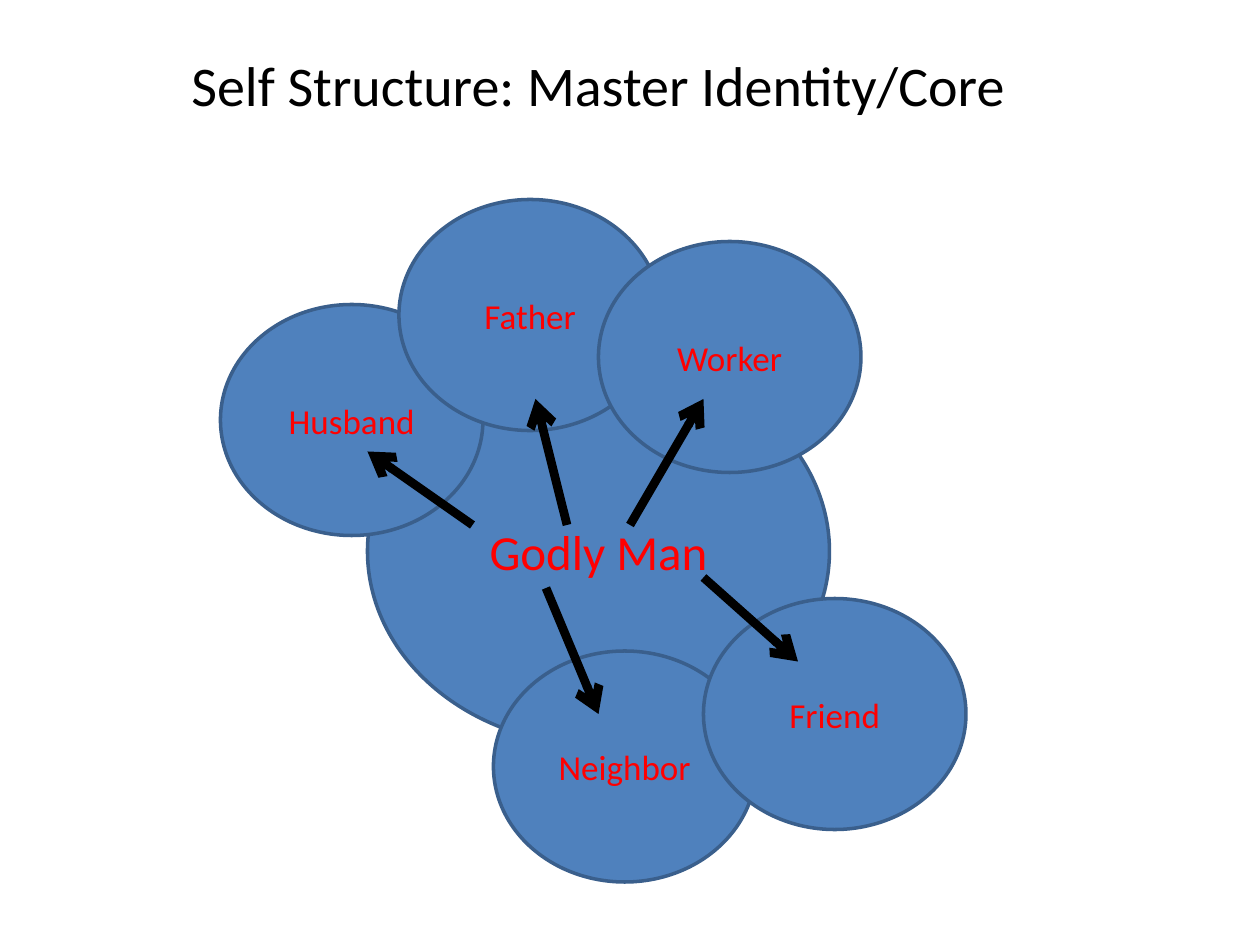
from typing import NamedTuple

from lxml import etree
from pptx import Presentation
from pptx.dml.color import RGBColor
from pptx.enum.shapes import MSO_CONNECTOR, MSO_SHAPE
from pptx.enum.text import MSO_ANCHOR, PP_ALIGN
from pptx.oxml.ns import qn
from pptx.util import Pt

PX = 7620  # EMU per px, 120 px to the inch
OVAL = MSO_SHAPE.OVAL
STRAIGHT = MSO_CONNECTOR.STRAIGHT
MIDDLE = MSO_ANCHOR.MIDDLE
CENTER = PP_ALIGN.CENTER

FONT = "Calibri"
COLORS = {
    "title": "000000",
    "circle": "4F81BD",
    "outline": "3A5F8C",
    "label": "FF0000",
    "arrow": "000000",
}
ROLE_W, ROLE_H = 250, 220


class Identity(NamedTuple):
    label: str
    x: int
    y: int
    w: int = ROLE_W
    h: int = ROLE_H
    size: int = 20


class Arrow(NamedTuple):
    x1: int
    y1: int
    x2: int
    y2: int


IDENTITIES = [
    Identity("Godly Man", 350, 340, 440, 370, 28),
    Identity("Husband", 210, 290),
    Identity("Neighbor", 470, 620),
    Identity("Father", 380, 190),
    Identity("Worker", 570, 230),
    Identity("Friend", 670, 570),
]
ARROWS = [
    Arrow(450, 500, 350, 430),
    Arrow(520, 560, 570, 680),
    Arrow(670, 550, 760, 630),
    Arrow(600, 500, 670, 380),
    Arrow(540, 500, 510, 380),
]


def rgb(name: str) -> RGBColor:
    return RGBColor.from_string(COLORS[name])


def set_text(sp, text: str, size: int, color: str) -> None:
    tf = sp.text_frame
    tf.word_wrap = True
    tf.vertical_anchor = MIDDLE
    p = tf.paragraphs[0]
    p.text = text
    p.alignment = CENTER
    p.font.name = FONT
    p.font.size = Pt(size)
    p.font.color.rgb = rgb(color)


def add_title(slide, text: str) -> None:
    sp = slide.shapes.add_textbox(40 * PX, 30 * PX, 1060 * PX, 100 * PX)
    set_text(sp, text, 32, "title")


def add_identity(slide, item: Identity) -> None:
    sp = slide.shapes.add_shape(
        OVAL, item.x * PX, item.y * PX, item.w * PX, item.h * PX)
    sp.shadow.inherit = False
    sp.fill.solid()
    sp.fill.fore_color.rgb = rgb("circle")
    sp.line.color.rgb = rgb("outline")
    sp.line.width = Pt(2)
    set_text(sp, item.label, item.size, "label")


def add_arrow(group, arrow: Arrow) -> None:
    line = group.shapes.add_connector(STRAIGHT, *(v * PX for v in arrow))
    line.line.color.rgb = rgb("arrow")
    line.line.width = Pt(5)
    ln = line.line._get_or_add_ln()
    etree.SubElement(ln, qn("a:tailEnd"), type="arrow")
    etree.SubElement(line._element.spPr, qn("a:effectLst"))


def main() -> None:
    prs = Presentation()
    prs.slide_width, prs.slide_height = 1200 * PX, 900 * PX
    slide = prs.slides.add_slide(prs.slide_layouts[6])
    add_title(slide, "Self Structure: Master Identity/Core")
    for item in IDENTITIES:
        add_identity(slide, item)
    group = slide.shapes.add_group_shape()
    for arrow in ARROWS:
        add_arrow(group, arrow)
    prs.save("out.pptx")


if __name__ == "__main__":
    main()
